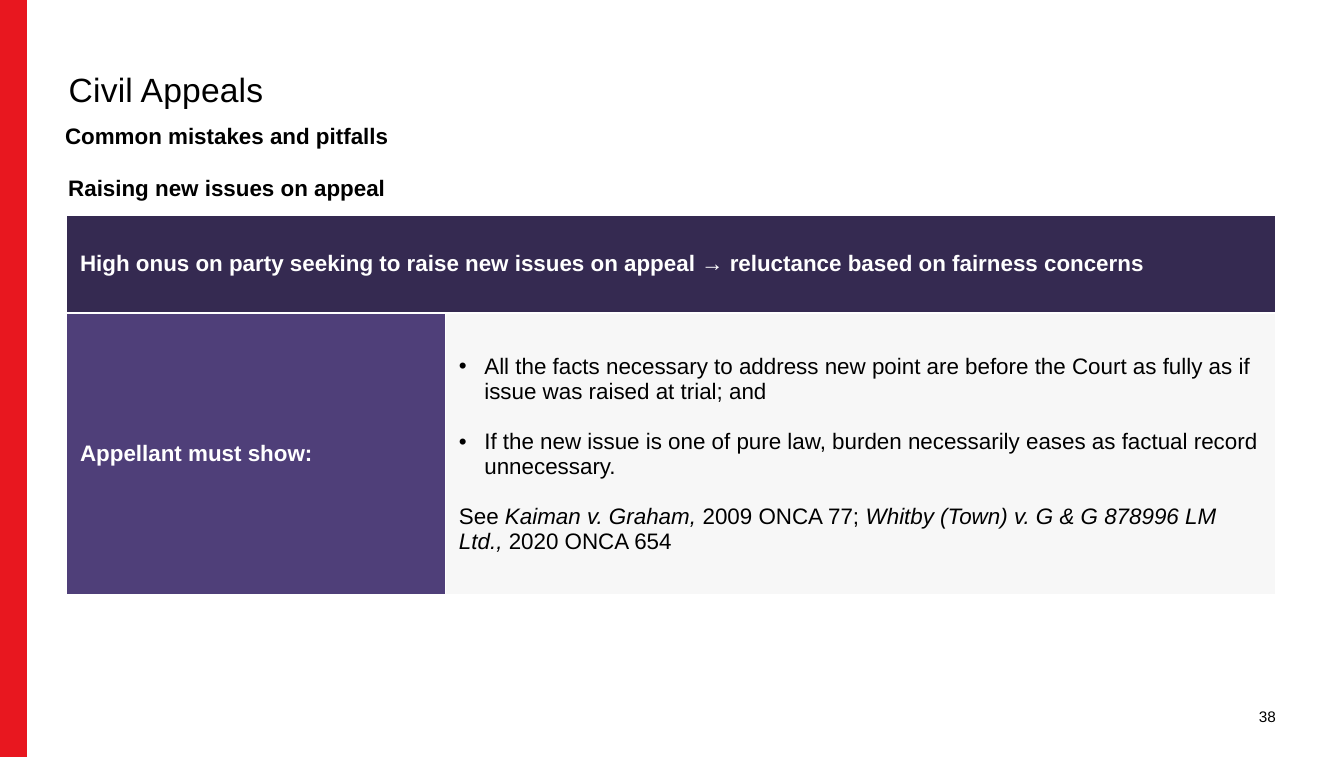
from lxml.etree import SubElement
from pptx import Presentation
from pptx.dml.color import RGBColor
from pptx.enum.shapes import MSO_SHAPE as Shape
from pptx.enum.text import MSO_ANCHOR as Anchor, PP_ALIGN as Align
from pptx.oxml import parse_xml
from pptx.oxml.ns import nsdecls, qn
from pptx.util import Cm, Pt

BLACK, WHITE, RED = "000000", "FFFFFF", "E8171F"
DARK_PURPLE, PURPLE, PALE_GREY = "352A51", "4F3F79", "F7F7F7"
SLIDE_WIDTH, SLIDE_HEIGHT = 25.4, 14.3
CONDITIONS = [
    "All the facts necessary to address new point are before the Court as fully as if issue was raised at trial; and",
    "If the new issue is one of pure law, burden necessarily eases as factual record unnecessary.",
]
CITATION = [
    ("See", False),
    (" Kaiman v. Graham, ", True),
    ("2009 ONCA 77; ", False),
    ("Whitby (Town) v. G & G 878996 LM Ltd., ", True),
    ("2020 ONCA 654", False),
]


def rgb(color):
    """Turn a hex string into a colour."""
    return RGBColor.from_string(color)


def apply(target, values):
    """Set each attribute named in values on the target."""
    for name, value in values.items():
        setattr(target, name, value)


def add_run(paragraph, text, color=BLACK, size=12, bold=False, italic=False):
    """Append a formatted run to a paragraph."""
    run = paragraph.add_run()
    run.text = text
    apply(run.font, {"name": "Arial", "size": Pt(size), "bold": bold, "italic": italic})
    run.font.color.rgb = rgb(color)
    return run


def add_label(slide, box, text, insets=(0.25, 0.13, 0.25, 0.13), anchor=Anchor.TOP,
              align=Align.LEFT, wrap=True, **style):
    """Place one line of text in a box and return its run."""
    frame = slide.shapes.add_textbox(*map(Cm, box)).text_frame
    sides = ("margin_left", "margin_top", "margin_right", "margin_bottom")
    apply(frame, dict(zip(sides, map(Cm, insets))))
    apply(frame, {"word_wrap": wrap, "vertical_anchor": anchor})
    frame.paragraphs[0].alignment = align
    return add_run(frame.paragraphs[0], text, **style)


def add_side_bar(slide, box):
    """Draw the red bar along the slide edge."""
    bar = slide.shapes.add_shape(Shape.RECTANGLE, *map(Cm, box))
    bar.shadow.inherit = False
    bar.fill.solid()
    bar.fill.fore_color.rgb = rgb(RED)
    bar.line.fill.background()


def add_headings(slide, box):
    """Place the title and its two subheadings."""
    left, top, width, _ = box
    title = add_label(slide, (left, top, width, 0.81), "Civil Appeals", (0.03, 0.04, 0, 0), size=18)
    title._r.get_or_add_rPr().set("spc", "10")
    add_label(slide, (left - 0.29, top + 0.91, 6.81, 0.76), "Common mistakes and pitfalls",
              wrap=False, bold=True)
    add_label(slide, (left - 0.23, top + 1.89, 14.3, 0.76), "Raising new issues on appeal", bold=True)


def style_cell(cell, color):
    """Fill a cell, centre it vertically and give it white borders."""
    cell.vertical_anchor = Anchor.MIDDLE
    cell.fill.solid()
    cell.fill.fore_color.rgb = rgb(color)
    properties = cell._tc.get_or_add_tcPr()
    for position, side in enumerate(("lnL", "lnR", "lnT", "lnB")):
        properties.insert(position, parse_xml(
            f'<a:{side} {nsdecls("a")} w="12700"><a:solidFill>'
            f'<a:srgbClr val="{WHITE}"/></a:solidFill></a:{side}>'))


def add_bullet(paragraph):
    """Give a paragraph a hanging bullet."""
    properties = paragraph._p.get_or_add_pPr()
    indent = Cm(0.48)
    properties.set("marL", str(indent))
    properties.set("indent", str(-indent))
    SubElement(properties, qn("a:buFont")).set("typeface", "Arial")
    SubElement(properties, qn("a:buChar")).set("char", "•")


def fill_conditions(frame):
    """Write the bulleted conditions and the case citation."""
    for index, condition in enumerate(CONDITIONS):
        paragraph = frame.add_paragraph() if index else frame.paragraphs[0]
        if index:
            paragraph.space_before = Pt(13.4)
        add_bullet(paragraph)
        add_run(paragraph, condition)
    citation = frame.add_paragraph()
    citation.space_before = Pt(13.4)
    for text, italic in CITATION:
        add_run(citation, text, italic=italic)


def add_onus_table(slide, box):
    """Build the table on the onus for raising new issues."""
    table = slide.shapes.add_table(2, 2, *map(Cm, box)).table
    _, _, width, height = box
    onus_height, label_width = 1.85, 7.16
    for row, size in zip(table.rows, (onus_height, height - onus_height)):
        row.height = Cm(size)
    for column, size in zip(table.columns, (label_width, width - label_width)):
        column.width = Cm(size)
    for cell, color in zip(table.iter_cells(), (DARK_PURPLE, DARK_PURPLE, PURPLE, PALE_GREY)):
        style_cell(cell, color)
    onus, requirement = table.cell(0, 0), table.cell(1, 0)
    onus.merge(table.cell(0, 1))
    for cell, text in (
        (onus, "High onus on party seeking to raise new issues on appeal → reluctance based on fairness concerns"),
        (requirement, "Appellant must show:"),
    ):
        add_run(cell.text_frame.paragraphs[0], text, WHITE, bold=True)
    fill_conditions(table.cell(1, 1).text_frame)


def add_page_number(slide, box):
    """Place the page number."""
    add_label(slide, box, "38", (0, 0, 0, 0), Anchor.MIDDLE, Align.RIGHT, size=8.2)


def main():
    """Build and save the slide."""
    deck = Presentation()
    apply(deck, {"slide_width": Cm(SLIDE_WIDTH), "slide_height": Cm(SLIDE_HEIGHT)})
    slide = deck.slides.add_slide(deck.slide_layouts[6])
    add_side_bar(slide, (0, 0, 0.51, SLIDE_HEIGHT))
    add_headings(slide, (1.27, 1.27, 22.86, 2.65))
    add_onus_table(slide, (1.26, 4.06, 22.86, 7.18))
    add_page_number(slide, (22.69, 12.78, 1.42, 1.52))
    deck.save("out.pptx")


if __name__ == "__main__":
    main()
